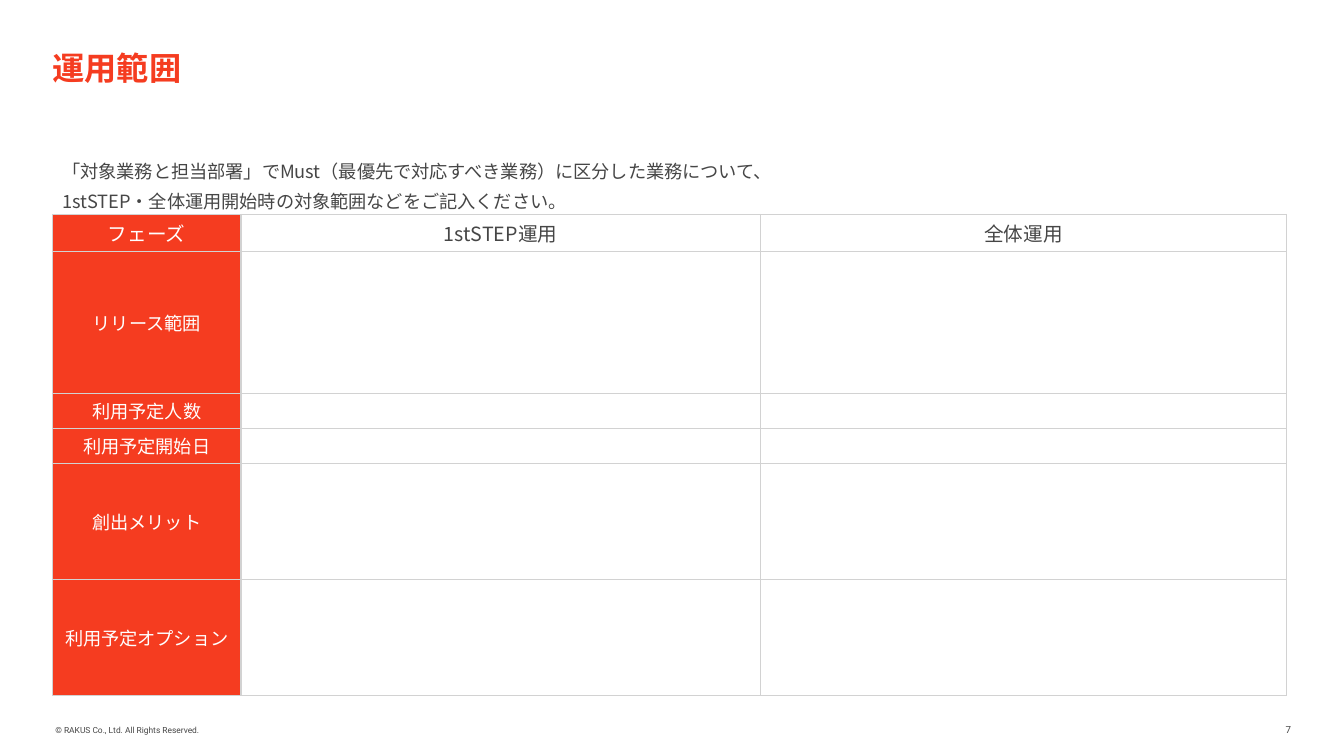
from lxml import etree
from pptx import Presentation
from pptx.dml.color import RGBColor
from pptx.enum import text as t
from pptx.oxml import ns
from pptx.util import Pt

COLORS = {"accent": "F53C20", "body": "464646", "white": "FFFFFF", "border": "D2D2D2"}
JAPANESE, LATIN = "Noto Sans CJK JP", "Roboto"

COLUMN_WIDTHS = [134.6, 371, 376]
ROWS = [  # height, label, values
    (26.5, "フェーズ", ["1stSTEP運用", "全体運用"]),
    (101.4, "リリース範囲", ["", ""]),
    (25, "利用予定人数", ["", ""]),
    (25, "利用予定開始日", ["", ""]),
    (82.8, "創出メリット", ["", ""]),
    (82.8, "利用予定オプション", ["", ""]),
]


def rgb(name):
    return RGBColor.from_string(COLORS[name])


def format_runs(paragraph, size, color, font, bold=False):
    for run in paragraph.runs:
        run.font.size = Pt(size)
        run.font.bold = bold
        run.font.name = font
        run.font.color.rgb = rgb(color)
        east_asian = etree.SubElement(run.font._element, ns.qn("a:ea"))
        east_asian.set("typeface", JAPANESE)


def fill_frame(frame, content, size, color, font, bold=False, spacing=None,
               align=t.PP_ALIGN.LEFT, anchor=t.MSO_ANCHOR.TOP):
    frame.margin_left = frame.margin_right = frame.margin_top = frame.margin_bottom = 0
    frame.word_wrap = True
    frame.auto_size = t.MSO_AUTO_SIZE.NONE
    frame.vertical_anchor = anchor
    frame.text = content
    for paragraph in frame.paragraphs:
        paragraph.alignment = align
        paragraph.line_spacing = spacing
        format_runs(paragraph, size, color, font, bold)


def add_text(slide, box, content, *style, **options):
    textbox = slide.shapes.add_textbox(*map(Pt, box))
    fill_frame(textbox.text_frame, content, *style, **options)


def add_borders(cell):
    properties = cell._tc.get_or_add_tcPr()
    for position, side in enumerate(("lnL", "lnR", "lnT", "lnB")):
        line = etree.Element(ns.qn("a:" + side), w=str(Pt(1)))
        solid = etree.SubElement(line, ns.qn("a:solidFill"))
        etree.SubElement(solid, ns.qn("a:srgbClr"), val=COLORS["border"])
        properties.insert(position, line)


def fill_cell(cell, content, size, color, background):
    cell.fill.solid()
    cell.fill.fore_color.rgb = rgb(background)
    cell.vertical_anchor = t.MSO_ANCHOR.MIDDLE
    cell.margin_top = cell.margin_bottom = Pt(2)
    add_borders(cell)
    paragraph = cell.text_frame.paragraphs[0]
    paragraph.alignment = t.PP_ALIGN.CENTER
    if content:
        paragraph.text = content
        format_runs(paragraph, size, color, JAPANESE)
    else:
        # Keeps blank cells from stretching the low rows
        etree.SubElement(paragraph._p, ns.qn("a:endParaRPr"), sz=str(size * 100))


def add_scope_table(slide, left, top):
    frame = slide.shapes.add_table(
        len(ROWS), len(COLUMN_WIDTHS), Pt(left), Pt(top),
        Pt(sum(COLUMN_WIDTHS)), Pt(sum(height for height, _, _ in ROWS)))
    scope = frame.table
    scope.horz_banding = False
    for column, width in zip(scope.columns, COLUMN_WIDTHS):
        column.width = Pt(width)
    for index, (height, label, values) in enumerate(ROWS):
        scope.rows[index].height = Pt(height)
        size = 14 if index == 0 else 13
        fill_cell(scope.cell(index, 0), label, size, "white", "accent")
        for column, value in enumerate(values, 1):
            fill_cell(scope.cell(index, column), value, size, "body", "white")


def main():
    prs = Presentation()
    prs.slide_width, prs.slide_height = Pt(960), Pt(540)
    slide = prs.slides.add_slide(prs.slide_layouts[5])

    # Title
    title = slide.shapes.title
    title.left, title.top, title.width, title.height = map(Pt, (37.5, 28.8, 749, 62.6))
    fill_frame(title.text_frame, "運用範囲", 23, "accent", LATIN, bold=True, spacing=1.2)

    # Instructions
    add_text(slide, (44.6, 109.4, 781, 60.5),
             "「対象業務と担当部署」でMust（最優先で対応すべき業務）に区分した業務について、\n"
             "1stSTEP・全体運用開始時の対象範囲などをご記入ください。",
             13, "body", JAPANESE, spacing=1.35)

    # Scope by phase
    add_scope_table(slide, 37.5, 153.2)

    # Footer
    add_text(slide, (39.6, 510.5, 204.5, 14.4), "©️ RAKUS Co., Ltd. All Rights Reserved.",
             6, "body", LATIN, anchor=t.MSO_ANCHOR.BOTTOM)
    add_text(slide, (853.2, 512.6, 69.1, 13), "7", 7, "body", LATIN,
             align=t.PP_ALIGN.RIGHT, anchor=t.MSO_ANCHOR.BOTTOM)

    prs.save("out.pptx")


if __name__ == "__main__":
    main()
